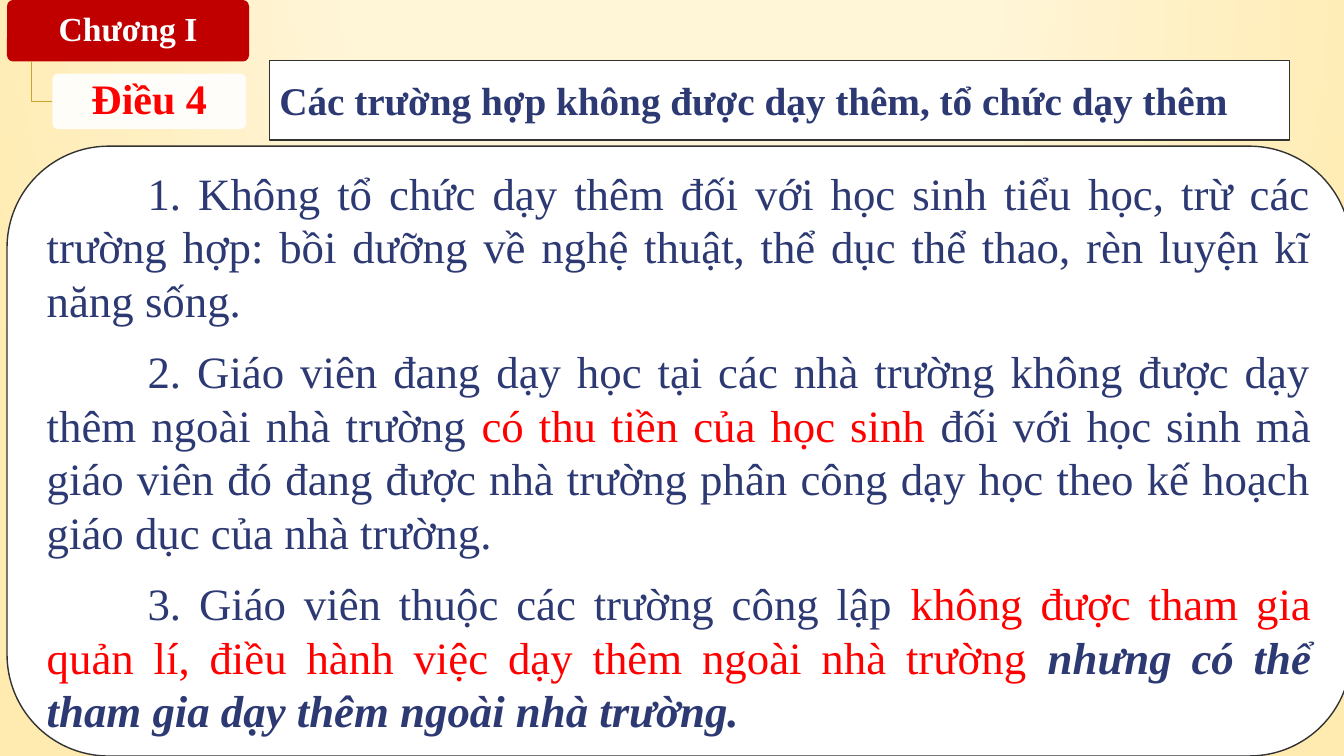
from pptx import Presentation
from pptx import oxml, util as u
from pptx.dml import color
from pptx.enum import shapes, text
from pptx.oxml import ns

FONT = "Times New Roman"
NAVY, RED, WHITE, EDGE = "2C3973", "FF0000", "FFFFFF", "323232"
CLAUSES = [
    [("1. Không tổ chức dạy thêm đối với học sinh tiểu học, trừ các trường hợp: bồi dưỡng "
      "về nghệ thuật, thể dục thể thao, rèn luyện kĩ năng sống. ", NAVY, False)],
    [("2. Giáo viên đang dạy học tại các nhà trường không được dạy thêm ngoài nhà trường ", NAVY, False),
     ("có thu tiền của học sinh ", RED, False),
     ("đối với học sinh mà giáo viên đó đang được nhà trường phân công dạy học theo kế hoạch "
      "giáo dục của nhà trường. ", NAVY, False)],
    [("3. Giáo viên thuộc các trường công lập ", NAVY, False),
     ("không được tham gia quản lí, điều hành việc dạy thêm ngoài nhà trường ", RED, False),
     ("nhưng có thể tham gia dạy thêm ngoài nhà trường. ", NAVY, True)],
]


def rgb(value):
    """Turn a hex string into a colour."""
    return color.RGBColor.from_string(value)


def inches(*values):
    """Turn numbers into lengths."""
    return [u.Inches(value) for value in values]


def style(span, size, value, bold=False, italic=False):
    """Set the font of a run."""
    span.font.name, span.font.size = FONT, u.Pt(size)
    span.font.bold, span.font.italic = bold, italic
    span.font.color.rgb = rgb(value)


def paint(shape, fill, line=None):
    """Fill a shape and outline it when a line colour is given."""
    shape.fill.solid()
    shape.fill.fore_color.rgb = rgb(fill)
    if line:
        shape.line.color.rgb = rgb(line)
        shape.line.width = u.Pt(1)
    else:
        shape.line.fill.background()


def add_panel(page, box, fill, line=None):
    """Add a rounded rectangle with wrapped, vertically centred text."""
    panel = page.shapes.add_shape(shapes.MSO_SHAPE.ROUNDED_RECTANGLE, *inches(*box))
    panel.shadow.inherit = False
    paint(panel, fill, line)
    panel.text_frame.word_wrap = True
    panel.text_frame.vertical_anchor = text.MSO_ANCHOR.MIDDLE
    return panel


def add_badge(page, box, label, size, fill, value):
    """Add a small label with one centred line."""
    badge = add_panel(page, box, fill)
    badge.adjustments[0] = 0.1
    frame = badge.text_frame
    frame.margin_left = frame.margin_right = u.Inches(0.07)
    frame.margin_top = frame.margin_bottom = u.Inches(0.05)
    frame.text = label
    para = frame.paragraphs[0]
    para.alignment, para.line_spacing = text.PP_ALIGN.CENTER, 0.9
    style(para.runs[0], size, value, bold=True)
    return badge


def add_chapter(page, box):
    """Add the chapter label, the article label below it and the elbow between them."""
    left, top, width, height = box
    add_badge(page, box, "Chương I", 24, "C00000", WHITE)
    elbow_x, elbow_y = left + width / 10, top + 1.01
    article_x = left + 0.45
    builder = page.shapes.build_freeform(*inches(elbow_x, top + height), scale=1.0)
    builder.add_line_segments([inches(elbow_x, elbow_y), inches(article_x, elbow_y)], close=False)
    elbow = builder.convert_to_shape()
    elbow.shadow.inherit = False
    elbow.fill.background()
    elbow.line.color.rgb, elbow.line.width = rgb("CCA42B"), u.Pt(1)
    article = add_badge(page, (article_x, top + 0.73, 1.92, 0.55), "Điều 4", 30, WHITE, RED)
    tint = article.fill._xPr.find(ns.qn("a:solidFill"))[0]
    oxml.parse_xml  # noqa
    tint.append(oxml.parse_xml(f'<a:alpha {ns.nsdecls("a")} val="90000"/>'))


def set_title(page, box):
    """Place the title in a rounded frame."""
    title = page.shapes.title
    title.left, title.top, title.width, title.height = inches(*box)
    title._element.spPr.append(oxml.parse_xml(
        f'<a:prstGeom {ns.nsdecls("a")} prst="roundRect"><a:avLst/></a:prstGeom>'))
    paint(title, WHITE, EDGE)
    frame = title.text_frame
    frame.text = "Các trường hợp không được dạy thêm, tổ chức dạy thêm"
    frame.word_wrap, frame.auto_size = True, text.MSO_AUTO_SIZE.NONE
    frame.vertical_anchor = text.MSO_ANCHOR.MIDDLE
    frame.paragraphs[0].alignment = text.PP_ALIGN.LEFT
    style(frame.paragraphs[0].runs[0], 28, NAVY, bold=True)


def add_clauses(page, box):
    """Add the large panel with one justified paragraph per clause."""
    frame = add_panel(page, box, WHITE, EDGE).text_frame
    for index, clause in enumerate(CLAUSES):
        para = frame.add_paragraph() if index else frame.paragraphs[0]
        para.alignment = text.PP_ALIGN.JUSTIFY
        para.space_before = para.space_after = u.Pt(6)
        para._p.get_or_add_pPr().set("indent", str(u.Inches(1)))
        for words, value, strong in clause:
            span = para.add_run()
            span.text = words
            style(span, 32, value, bold=strong, italic=strong)


def set_background(page):
    """Give the page a cream gradient that spreads from above the top edge."""
    fill = page.background.fill
    fill.gradient()
    gradient = page._element.cSld.bg.bgPr.find(ns.qn("a:gradFill"))
    stops = "".join(f'<a:gs pos="{place}"><a:srgbClr val="{value}"/></a:gs>'
                    for place, value in ((0, "FFF5D7"), (40000, "FFF5D7"), (100000, "FFEBAF")))
    gradient.getparent().replace(gradient, oxml.parse_xml(
        f'<a:gradFill {ns.nsdecls("a")} rotWithShape="1"><a:gsLst>{stops}</a:gsLst><a:path path="circle">'
        '<a:fillToRect l="50000" t="-80000" r="50000" b="180000"/></a:path></a:gradFill>'))


def main():
    """Build and save the deck."""
    deck = Presentation()
    deck.slide_width, deck.slide_height = inches(13.33, 7.5)
    page = deck.slides.add_slide(deck.slide_layouts[5])
    set_background(page)
    add_chapter(page, (0.07, 0, 2.4, 0.61))
    set_title(page, (2.67, 0.6, 10.12, 0.79))
    add_clauses(page, (0.07, 1.45, 13.33, 6.05))
    deck.save("out.pptx")


if __name__ == "__main__":
    main()
